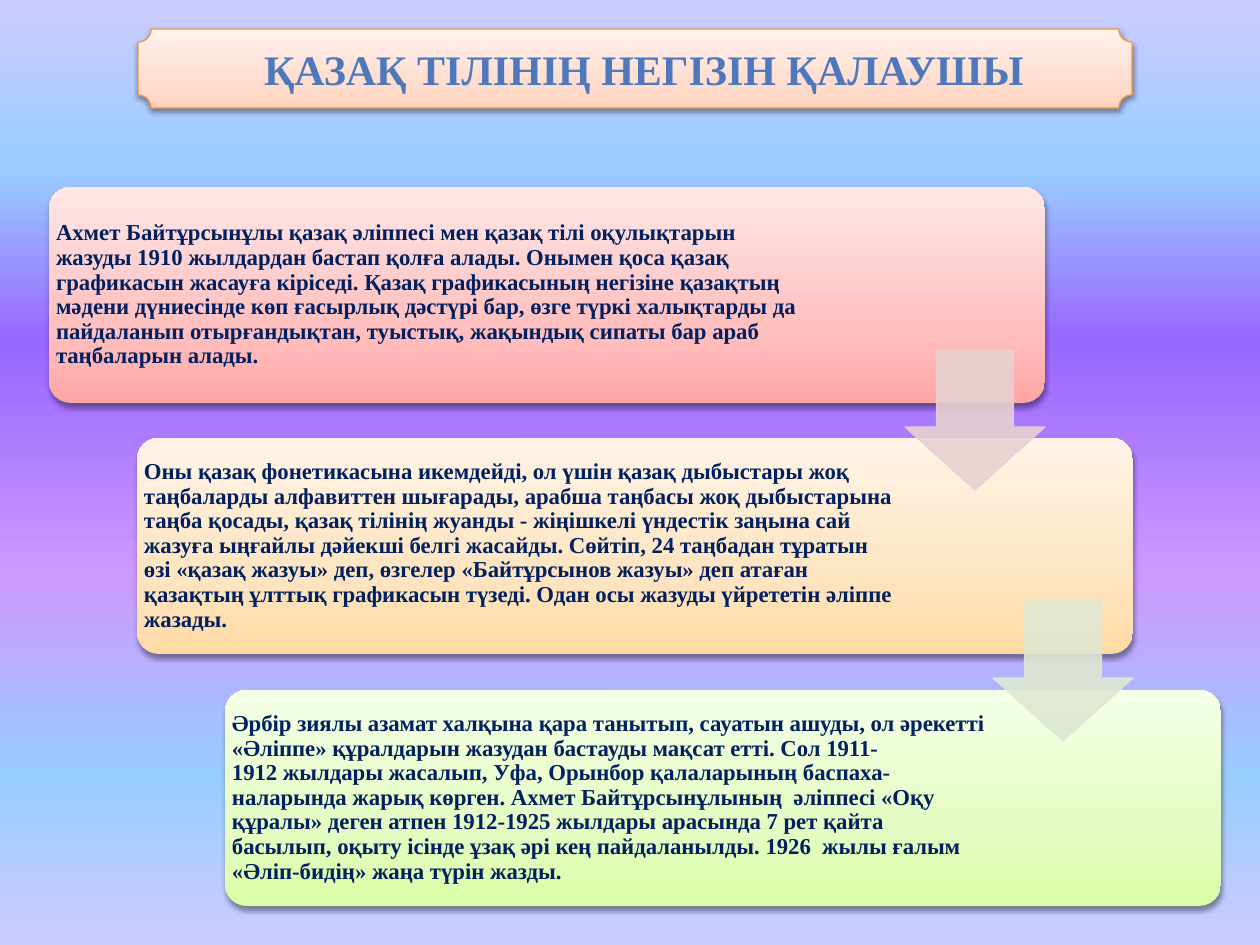
from dataclasses import dataclass

from lxml.etree import SubElement
from pptx import Presentation
from pptx.dml.color import RGBColor
from pptx.enum.shapes import MSO_SHAPE as Shape
from pptx.enum.text import MSO_ANCHOR, MSO_AUTO_SIZE, PP_ALIGN
from pptx.oxml.ns import qn
from pptx.util import Emu, Pt

Stops = tuple[tuple[int, str], ...]
UP, DOWN = 90, 270
NBSP = chr(160)


@dataclass(frozen=True)
class Theme:
    font: str = "Times New Roman"
    title_size: int = 24
    body_size: int = 13
    title_color: str = "4D79BC"
    body_color: str = "002060"
    plaque_line: str = "F69240"
    plaque: Stops = ((0, "FFD2BD"), (35, "FFDED0"), (100, "FFF2ED"))
    background: Stops = ((0, "CCCCFF"), (18, "99CCFF"), (36, "9966FF"),
                         (61, "CC99FF"), (82, "99CCFF"), (100, "CCCCFF"))


@dataclass(frozen=True)
class Box:
    left: int
    top: int
    width: int
    height: int

    def emu(self) -> list[Emu]:
        return [px(v) for v in (self.left, self.top, self.width, self.height)]


@dataclass(frozen=True)
class Step:
    text: str
    text_width: int
    stops: Stops
    arrow_color: str | None = None


THEME = Theme()
CARD = Box(49, 187, 996, 216)
LAST_TOP = 690
STEP_X = 88
ARROW_SIZE, ARROW_DROP = 140, 163
PLAQUE = Box(138, 29, 994, 79)
TITLE = Box(264, 29, 868, 79)
TITLE_TEXT = "ҚАЗАҚ ТІЛІНІҢ НЕГІЗІН ҚАЛАУШЫ"
STEPS = (
    Step("Ахмет Байтұрсынұлы қазақ әліппесі мен қазақ тілі оқулықтарын "
         f"жазуды{NBSP}1910 жылдардан бастап қолға алады. Онымен қоса қазақ "
         "графикасын жасауға кіріседі. Қазақ графикасының негізіне қазақтың "
         "мәдени дүниесінде көп ғасырлық дәстүрі бар, өзге түркі халықтарды да "
         "пайдаланып отырғандықтан, туыстық, жақындық сипаты бар араб "
         "таңбаларын алады.",
         777, ((0, "FFA6A5"), (35, "FFC0BF"), (100, "FFE7E7")), "E8D0D0"),
    Step("Оны қазақ фонетикасына икемдейді, ол үшін қазақ дыбыстары жоқ "
         "таңбаларды алфавиттен шығарады, арабша таңбасы жоқ дыбыстарына "
         "таңба қосады, қазақ тілінің жуанды - жіңішкелі үндестік заңына сай "
         "жазуға ыңғайлы дәйекші белгі жасайды. Сөйтіп, 24 таңбадан тұратын "
         "өзі «қазақ жазуы» деп, өзгелер «Байтұрсынов жазуы» деп атаған "
         "қазақтың ұлттық графикасын түзеді. Одан осы жазуды үйрететін әліппе "
         "жазады.",
         768, ((0, "FFDAA5"), (35, "FEE4C0"), (100, "FFF4E7")), "DEE7D1"),
    Step("Әрбір зиялы азамат халқына қара танытып, сауатын ашуды, ол әрекетті "
         f"«Әліппе» құралдарын жазудан бастауды мақсат етті. Сол{NBSP}1911-"
         f"1912{NBSP}жылдары жасалып, Уфа, Орынбор қалаларының баспаха- "
         f"наларында жарық көрген. Ахмет Байтұрсынұлының{NBSP} әліппесі «Оқу "
         f"құралы» деген атпен{NBSP}1912-1925{NBSP}жылдары арасында 7 рет қайта "
         f"басылып, оқыту ісінде ұзақ әрі кең пайдаланылды.{NBSP}1926 {NBSP}жылы "
         "ғалым «Әліп-бидің» жаңа түрін жазды.",
         768, ((0, "DAFDA7"), (35, "E4FCC2"), (100, "F5FFE7"))),
)


def px(value: int) -> Emu:
    return Emu(round(value * 914400 / 126))


def rgb(color: str) -> RGBColor:
    return RGBColor.from_string(color)


def set_gradient(fill, element, stops: Stops, angle: int) -> None:
    """Give fill, which lives inside element, a linear gradient."""
    fill.gradient()
    fill.gradient_angle = angle
    gs_list = next(element.iter(qn("a:gsLst")))
    for gs in list(gs_list):
        gs_list.remove(gs)
    for position, color in stops:
        gs = SubElement(gs_list, qn("a:gs"), pos=str(position * 1000))
        SubElement(gs, qn("a:srgbClr"), val=color)


def add_panel(s, kind: Shape, box: Box, stops: Stops):
    """Add a gradient shape with a soft shadow below it."""
    sp = s.shapes.add_shape(kind, *box.emu())
    set_gradient(sp.fill, sp._element, stops, UP)
    sp.line.fill.background()
    sp.shadow.inherit = False
    effects = next(sp._element.iter(qn("a:effectLst")))
    shadow = SubElement(effects, qn("a:outerShdw"), blurRad="40000",
                        dist="20000", dir="5400000", rotWithShape="0")
    color = SubElement(shadow, qn("a:srgbClr"), val="000000")
    SubElement(color, qn("a:alpha"), val="38000")
    return sp


def write(tf, text: str, size: int, color: str, margin: int,
          spacing: float) -> None:
    frame = dict(word_wrap=True, auto_size=MSO_AUTO_SIZE.NONE,
                 vertical_anchor=MSO_ANCHOR.MIDDLE)
    frame |= {f"margin_{side}": px(margin)
              for side in ("left", "top", "right", "bottom")}
    for name, value in frame.items():
        setattr(tf, name, value)
    p = tf.paragraphs[0]
    p.alignment, p.line_spacing = PP_ALIGN.LEFT, spacing
    r = p.add_run()
    r.text = text
    for name, value in dict(name=THEME.font, size=Pt(size), bold=True).items():
        setattr(r.font, name, value)
    r.font.color.rgb = rgb(color)


def add_card(s, step: Step, box: Box) -> None:
    panel = add_panel(s, Shape.ROUNDED_RECTANGLE, box, step.stops)
    panel.adjustments[0] = 0.1
    text_box = Box(box.left, box.top, step.text_width, box.height)
    tf = s.shapes.add_textbox(*text_box.emu()).text_frame
    write(tf, step.text, THEME.body_size, THEME.body_color, 7, 0.9)


def add_arrow(s, color: str, card: Box) -> None:
    """Add a translucent arrow leading from the card to the next one."""
    box = Box(card.left + card.width - ARROW_SIZE, card.top + ARROW_DROP,
              ARROW_SIZE, ARROW_SIZE)
    sp = s.shapes.add_shape(Shape.DOWN_ARROW, *box.emu())
    sp.adjustments[0], sp.adjustments[1] = 0.55, 0.45
    sp.shadow.inherit = False
    sp.line.width = Pt(0.75)
    for fill in (sp.fill, sp.line.fill):
        fill.solid()
        fill.fore_color.rgb = rgb(color)
    for clr in sp._element.iter(qn("a:srgbClr")):
        SubElement(clr, qn("a:alpha"), val="90000")


def add_title(s) -> None:
    plaque = add_panel(s, Shape.PLAQUE, PLAQUE, THEME.plaque)
    plaque.line.color.rgb = rgb(THEME.plaque_line)
    plaque.line.width = Pt(0.75)
    title = s.shapes.title
    title.left, title.top, title.width, title.height = TITLE.emu()
    write(title.text_frame, TITLE_TEXT, THEME.title_size, THEME.title_color,
          0, 1.0)
    plaque._element.addnext(title._element)


def main() -> None:
    prs = Presentation()
    prs.slide_width, prs.slide_height = px(1260), px(945)
    s = prs.slides.add_slide(prs.slide_layouts[5])
    set_gradient(s.background.fill, s._element, THEME.background, DOWN)
    drop = LAST_TOP - CARD.top
    cards = [Box(CARD.left + i * STEP_X, CARD.top + i * drop // (len(STEPS) - 1),
                 CARD.width, CARD.height) for i in range(len(STEPS))]
    for step, card in zip(STEPS, cards):
        add_card(s, step, card)
    for step, card in zip(STEPS, cards):
        if step.arrow_color:
            add_arrow(s, step.arrow_color, card)
    add_title(s)
    prs.save("out.pptx")


if __name__ == "__main__":
    main()
